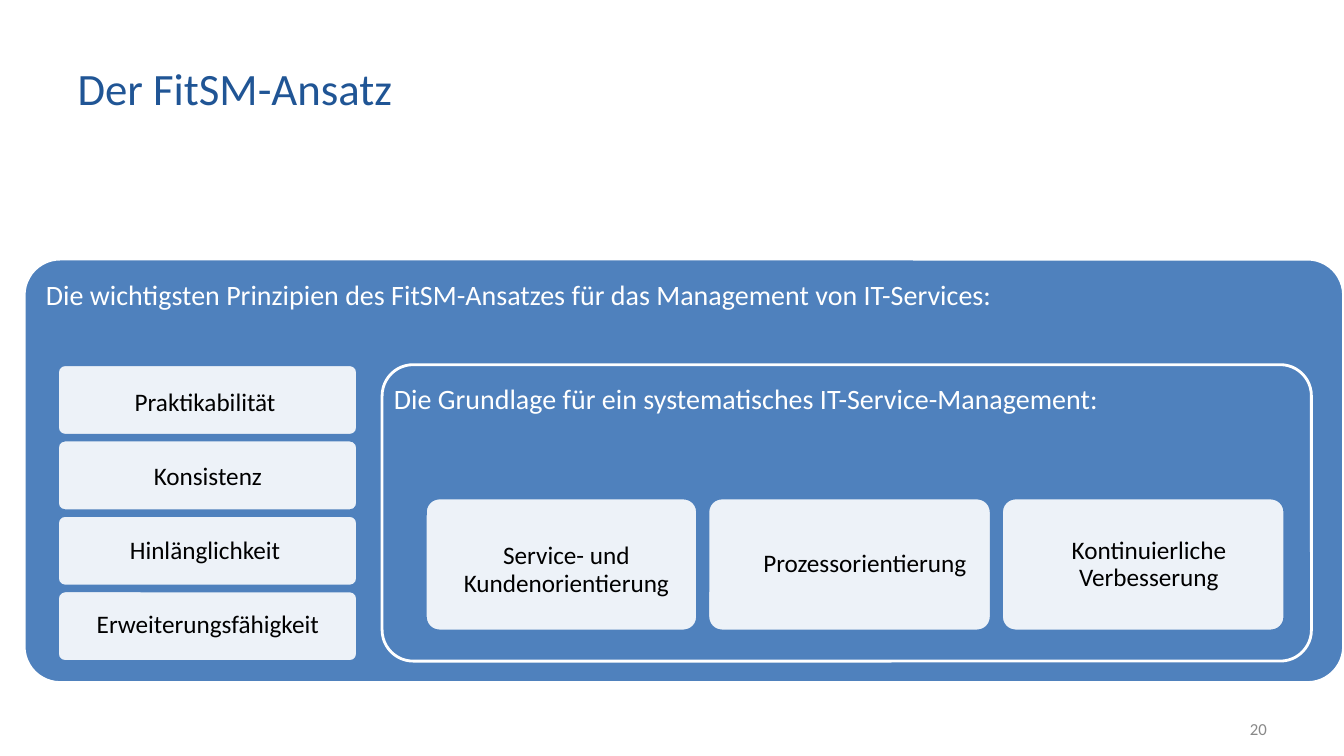
"""Build the slide on the principles of the FitSM approach."""
from lxml import etree
from pptx import Presentation
from pptx.dml.color import RGBColor
from pptx.enum import shapes, text
from pptx.oxml import ns
from pptx.util import Cm, Pt

TITLE = "Der FitSM-Ansatz"
PAGE_NUMBER = "20"

PANELS = [
    {"heading": "Die wichtigsten Prinzipien des FitSM-Ansatzes für das Management von IT-Services:",
     "box": (0.61, 6.53, 33.25, 10.67), "text_box": (0.86, 6.78, 32.77, 10.16), "corner": 0.085},
    {"heading": "Die Grundlage für ein systematisches IT-Service-Management:",
     "box": (9.63, 9.19, 23.42, 7.47), "text_box": (9.63, 9.42, 23.22, 7.01), "corner": 0.105},
]
# label, left edge of its text
PRINCIPLES = [
    ("Praktikabilität", 1.4),
    ("Konsistenz", 1.47),
    ("Hinlänglichkeit", 1.4),
    ("Erweiterungsfähigkeit", 1.47),
]
# label, card width, left and top edge of its text
FOUNDATIONS = [
    ("Service- und Kundenorientierung", 6.86, 11.0, 12.8),
    ("Prozessorientierung", 7.14, 18.52, 12.65),
    ("Kontinuierliche Verbesserung", 7.14, 25.68, 12.65),
]

FONT = "Calibri"
BLUE = RGBColor(0x4F, 0x81, 0xBD)
TITLE_BLUE = RGBColor(0x20, 0x55, 0x95)
WHITE = RGBColor(0xFF, 0xFF, 0xFF)
BLACK = RGBColor(0, 0, 0)
GREY = RGBColor(0x88, 0x88, 0x88)


def lengths(box):
    return [Cm(value) for value in box]


def style(paragraph, size, color, alignment=text.PP_ALIGN.LEFT):
    paragraph.alignment = alignment
    paragraph.font.size = Pt(size)
    paragraph.font.name = FONT
    paragraph.font.color.rgb = color


def add_panel(slide, box, corner, fill, line, opacity=None):
    shape = slide.shapes.add_shape(shapes.MSO_SHAPE.ROUNDED_RECTANGLE, *lengths(box))
    shape.adjustments[0] = corner
    shape.shadow.inherit = False
    shape.fill.solid()
    shape.fill.fore_color.rgb = fill
    shape.line.color.rgb = line
    shape.line.width = Pt(2)
    if opacity:
        color = shape.fill._xPr.find(ns.qn("a:solidFill"))[0]
        etree.SubElement(color, ns.qn("a:alpha"), val=str(opacity * 1000))


def add_text(slide, words, box, size, color, alignment, anchor, inset, spacing=0.9):
    frame = slide.shapes.add_textbox(*lengths(box)).text_frame
    frame.word_wrap = True
    frame.vertical_anchor = anchor
    frame.margin_left = frame.margin_right = Cm(inset)
    frame.margin_top = frame.margin_bottom = Cm(inset)
    frame.text = words
    paragraph = frame.paragraphs[0]
    paragraph.line_spacing = spacing
    style(paragraph, size, color, alignment)


def add_heading_panel(slide, panel):
    add_panel(slide, panel["box"], panel["corner"], BLUE, WHITE)
    add_text(slide, panel["heading"], panel["text_box"], 20, WHITE,
             text.PP_ALIGN.LEFT, text.MSO_ANCHOR.TOP, 0.3)


def add_card(slide, label, box, text_box):
    add_panel(slide, box, 0.105, WHITE, BLUE, opacity=90)
    add_text(slide, label, text_box, 18, BLACK,
             text.PP_ALIGN.CENTER, text.MSO_ANCHOR.MIDDLE, 0.23)


def main():
    presentation = Presentation()
    presentation.slide_width, presentation.slide_height = Cm(33.87), Cm(19.05)
    slide = presentation.slides.add_slide(presentation.slide_layouts[5])

    title = slide.shapes.title
    title.left, title.top, title.width, title.height = lengths((1.7, 0.76, 25.17, 2.92))
    title.text_frame.text = TITLE
    title.text_frame.vertical_anchor = text.MSO_ANCHOR.MIDDLE
    style(title.text_frame.paragraphs[0], 32, TITLE_BLUE)

    outer_panel, inner_panel = PANELS
    add_heading_panel(slide, outer_panel)
    for row, (label, text_left) in enumerate(PRINCIPLES):
        add_card(slide, label, (1.45, 9.19 + row * 1.9, 7.56, 1.78),
                 (text_left, 9.35 + row * 1.86, 7.54, 1.65))

    add_heading_panel(slide, inner_panel)
    left = 10.72
    for label, width, text_left, text_top in FOUNDATIONS:
        add_card(slide, label, (left, 12.55, width, 3.35), (text_left, text_top, 6.55, 3.15))
        left += width + 0.26

    add_text(slide, PAGE_NUMBER, (24.28, 17.86, 7.9, 1.01), 12, GREY,
             text.PP_ALIGN.RIGHT, text.MSO_ANCHOR.MIDDLE, 0.25, spacing=1.0)
    presentation.save("out.pptx")


if __name__ == "__main__":
    main()
